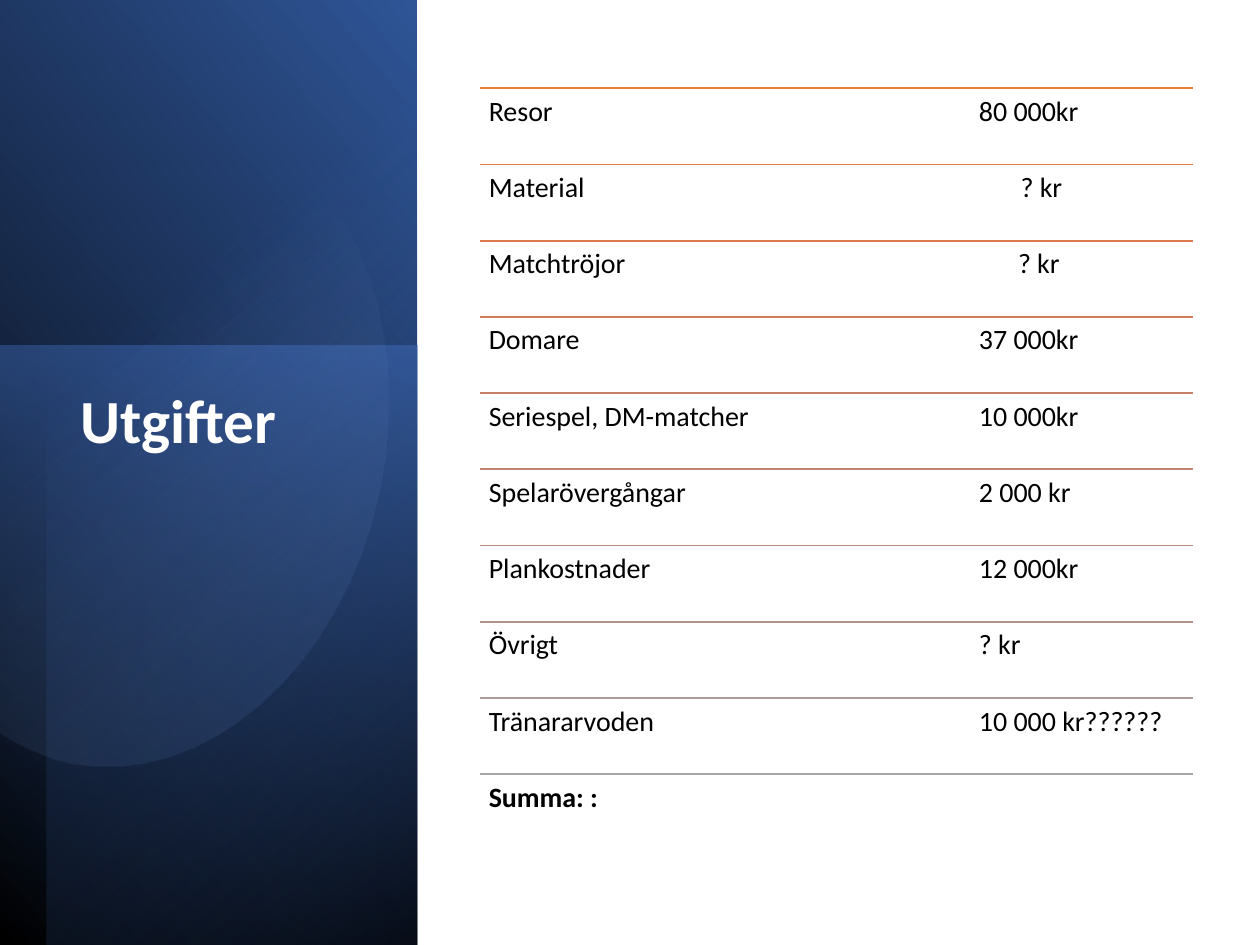
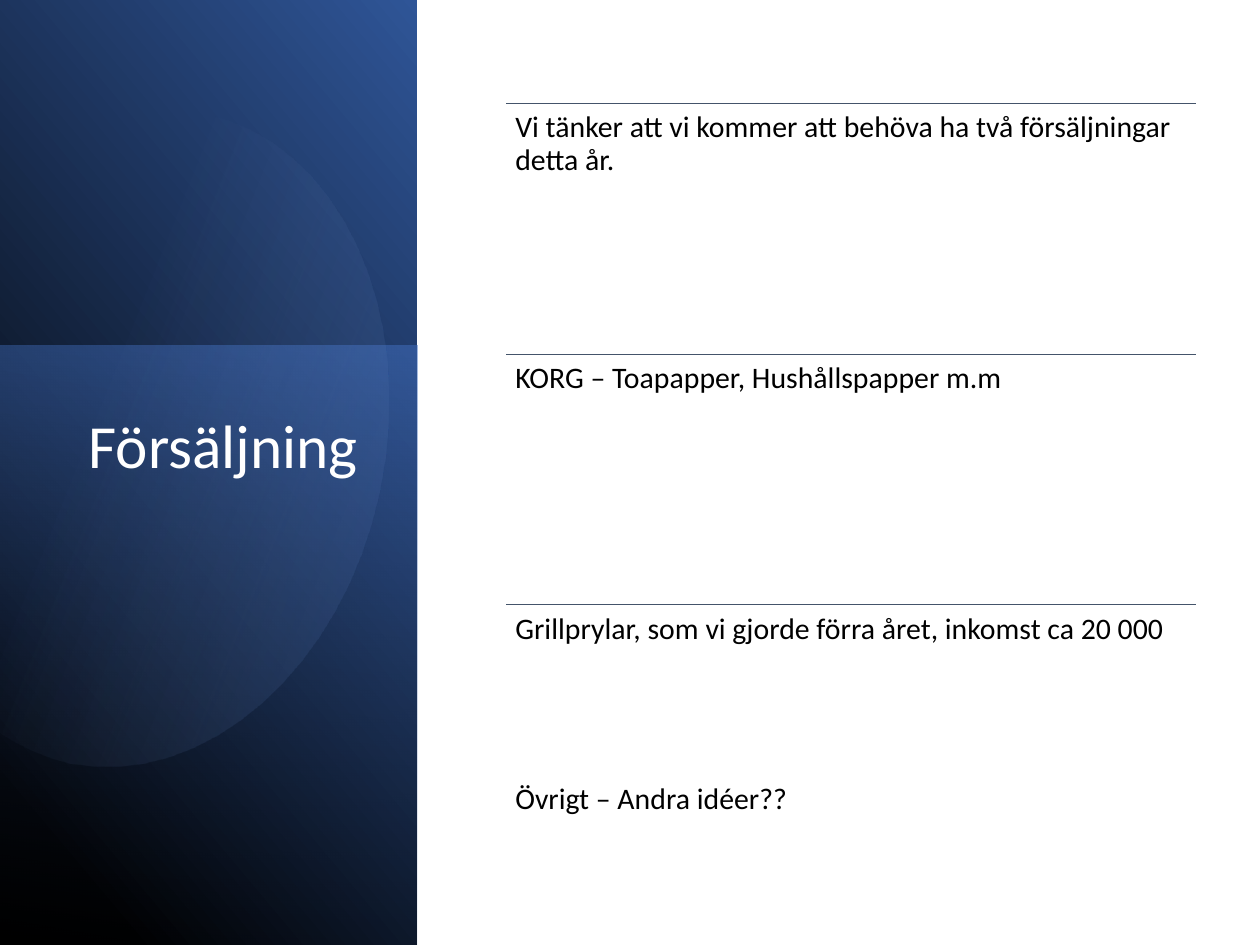
from dataclasses import dataclass
from math import cos, radians, sin

from lxml.etree import SubElement
from pptx import Presentation
from pptx.dml.color import RGBColor
from pptx.enum.shapes import MSO_CONNECTOR, MSO_SHAPE
from pptx.enum.text import MSO_ANCHOR, PP_ALIGN
from pptx.oxml.ns import qn
from pptx.util import Inches, Pt


@dataclass(frozen=True)
class Theme:
    font: str = "Calibri"
    title_size: int = 35
    row_size: int = 16
    note_size: int = 17
    white: str = "FFFFFF"
    black: str = "000000"
    navy: str = "203864"
    deep_blue: str = "2F5597"
    blue: str = "4472C4"
    pale_blue: str = "8FAADC"
    slate: str = "44546A"
    rules: tuple = ("ED7D31", "E37A40", "DA7A4E", "D17B5C", "C87F69",
                    "C08376", "B98A82", "B2928E", "AB9B9A", "A5A5A5")


THEME = Theme()
SIDE_PANEL = (0, 0, 3.31, 7.5)
OVAL_TURN = 101.6
OVAL_CENTRE = (1.36, 3.54)
OVAL_START = (1.2, 0.89)
OVAL_CURVES = (
    ((1.33, 0.88), (1.47, 0.89), (1.6, 0.91)),
    ((2.67, 1.13), (3.29, 2.47), (3, 3.89)),
    ((2.71, 5.31), (1.61, 6.28), (0.54, 6.07)),
    ((0.34, 6.02), (0.16, 5.94), (-0.01, 5.83)),
    ((-0.12, 5.74),),
    ((0.09, 1.38),),
    ((0.25, 1.25),),
    ((0.54, 1.04), (0.87, 0.91), (1.2, 0.89)),
)
VALUE_TAB = 3.89
EXPENSES = (
    ("Resor", "80 000kr", VALUE_TAB),
    ("Material", "? kr", 4.22),
    ("Matchtröjor", "? kr", 4.2),
    ("Domare", "37 000kr", VALUE_TAB),
    ("Seriespel, DM-matcher", "10 000kr", VALUE_TAB),
    ("Spelarövergångar", "2 000 kr", VALUE_TAB),
    ("Plankostnader", "12 000kr", VALUE_TAB),
    ("Övrigt", "? kr", VALUE_TAB),
    ("Tränararvoden", "10 000 kr??????", VALUE_TAB),
    ("Summa: :", "", VALUE_TAB),
)
SALES = (
    ("Vi tänker att vi kommer att behöva ha två försäljningar detta år.",),
    ("KORG – Toapapper, Hushållspapper m.m",),
    ("Grillprylar, som vi gjorde förra året, inkomst ca 20 000",
     "Övrigt – Andra idéer??"),
)


def apply(target, values):
    for name, value in values.items():
        setattr(target, name, value)


def fill_gradient(shape, stops, angle):
    shape.shadow.inherit = False
    shape.line.fill.background()
    shape.fill.gradient()
    gradient = shape.fill._fill._gradFill
    for child in list(gradient):
        gradient.remove(child)
    gradient.set("rotWithShape", "1")
    stop_list = SubElement(gradient, qn("a:gsLst"))
    for position, color, opacity in stops:
        stop = SubElement(stop_list, qn("a:gs"), pos=str(position * 1000))
        tone = SubElement(stop, qn("a:srgbClr"), val=color)
        if opacity < 100:
            SubElement(tone, qn("a:alpha"), val=str(opacity * 1000))
    SubElement(gradient, qn("a:lin"), ang=str(angle * 60000), scaled="0")


def add_turned_band(page, box, rotation, flipped, stops, angle):
    left, top, width, height = box
    shift = (width - height) / 2
    band = page.shapes.add_shape(
        MSO_SHAPE.RECTANGLE, Inches(left + shift), Inches(top - shift),
        Inches(height), Inches(width))
    band.rotation = rotation
    if flipped:
        band._element.spPr.find(qn("a:xfrm")).set("flipH", "1")
    fill_gradient(band, stops, angle)


def curve_points(start, controls, steps=16):
    if len(controls) == 1:
        return list(controls)
    knots = (start, *controls)
    points = []
    for step in range(1, steps + 1):
        t = step / steps
        weights = ((1 - t) ** 3, 3 * t * (1 - t) ** 2, 3 * t * t * (1 - t), t ** 3)
        points.append(tuple(
            sum(weight * knot[axis] for weight, knot in zip(weights, knots))
            for axis in (0, 1)))
    return points


def add_oval(page, box, angle):
    outline = [OVAL_START]
    for controls in OVAL_CURVES:
        outline += curve_points(outline[-1], controls)
    turn = radians(-OVAL_TURN)
    centre_x, centre_y = OVAL_CENTRE
    points = []
    for x, y in outline:
        across, down = x - centre_x, y - centre_y
        points.append((
            Inches(box[0] + centre_x + across * cos(turn) - down * sin(turn)),
            Inches(box[1] + centre_y + across * sin(turn) + down * cos(turn))))
    builder = page.shapes.build_freeform(*points[0])
    builder.add_line_segments(points[1:], close=True)
    oval = builder.convert_to_shape()
    oval.rotation = OVAL_TURN
    fill_gradient(oval, ((39, THEME.pale_blue, 0), (100, THEME.deep_blue, 26)), angle)


def add_side_panel(page, box, black_stop, oval_angle, shaded):
    left, top, width, height = box
    add_turned_band(page, box, 90, True,
                    ((black_stop, THEME.black, 100), (100, THEME.deep_blue, 100)), 310)
    glow_top = 2.74
    add_turned_band(page, (left, top + glow_top, width, height - glow_top), 270, False,
                    ((0, THEME.blue, 50), (100, THEME.navy, 0)), 190)
    if shaded:
        inset = 0.37
        add_turned_band(page, (left + inset, top, width - inset, height), 270, True,
                        ((0, THEME.black, 59), (69, THEME.blue, 0)), 220)
    add_oval(page, box, oval_angle)


def add_text(shapes, box, texts, size, color, bold=False, align=PP_ALIGN.LEFT,
             inset=0.07, tab=None, gap=0):
    text_box = shapes.add_textbox(*map(Inches, box))
    frame = text_box.text_frame
    apply(frame, {"word_wrap": True, "vertical_anchor": MSO_ANCHOR.TOP,
                  "margin_left": Inches(inset), "margin_right": Inches(inset),
                  "margin_top": Inches(min(inset, 0.07)),
                  "margin_bottom": Inches(min(inset, 0.07))})
    for index, text in enumerate(texts):
        para = frame.add_paragraph() if index else frame.paragraphs[0]
        if tab:
            tabs = SubElement(para._p.get_or_add_pPr(), qn("a:tabLst"))
            SubElement(tabs, qn("a:tab"), pos=str(Inches(tab)), algn="l")
        apply(para, {"alignment": align, "line_spacing": 0.9})
        if index:
            para.space_before = Pt(gap)
        span = para.add_run()
        span.text = text
        apply(span.font, {"name": THEME.font, "size": Pt(size), "bold": bold})
        span.font.color.rgb = RGBColor.from_string(color)


def add_title(page, box, text, bold, align):
    add_text(page.shapes, box, (text,), THEME.title_size, THEME.white,
             bold, align, inset=0.1)


def add_rule(shapes, left, top, width, color, weight):
    rule = shapes.add_connector(MSO_CONNECTOR.STRAIGHT, Inches(left), Inches(top),
                                Inches(left + width), Inches(top))
    rule.line.color.rgb = RGBColor.from_string(color)
    rule.line.width = Pt(weight)
    SubElement(rule._element.spPr, qn("a:effectLst"))


def add_expense_list(page, box):
    left, top, width, height = box
    shapes = page.shapes.add_group_shape().shapes
    row_height = height / len(EXPENSES)
    for index, (label, amount, tab) in enumerate(EXPENSES):
        row_top = top + index * row_height
        add_rule(shapes, left, row_top, width, THEME.rules[index], 1)
        text = f"{label}\t{amount}" if amount else label
        add_text(shapes, (left, row_top, width, row_height), (text,),
                 THEME.row_size, THEME.black, bold=not amount,
                 tab=tab if amount else None)


def add_sales_list(page, box):
    left, top, width, height = box
    shapes = page.shapes.add_group_shape().shapes
    row_height = height / len(SALES)
    for index, texts in enumerate(SALES):
        row_top = top + index * row_height
        add_rule(shapes, left, row_top, width, THEME.slate, 0.5)
        add_text(shapes, (left, row_top, width, row_height), texts,
                 THEME.note_size, THEME.black, gap=79)


def add_expenses_page(page):
    add_side_panel(page, SIDE_PANEL, black_stop=0, oval_angle=310, shaded=True)
    add_title(page, (0.54, 3.03, 2.36, 3.36), "Utgifter", True, PP_ALIGN.LEFT)
    add_expense_list(page, (3.81, 0.7, 5.66, 6.05))


def add_sales_page(page):
    add_side_panel(page, SIDE_PANEL, black_stop=11, oval_angle=280, shaded=False)
    add_title(page, (0.44, 3.23, 2.5, 3.86), "Försäljning", False, PP_ALIGN.RIGHT)
    add_sales_list(page, (4.02, 0.82, 5.47, 5.97))


def main():
    deck = Presentation()
    apply(deck, {"slide_width": Inches(10), "slide_height": Inches(7.5)})
    for build_page in (add_expenses_page, add_sales_page):
        build_page(deck.slides.add_slide(deck.slide_layouts[6]))
    deck.save("out.pptx")


if __name__ == "__main__":
    main()
